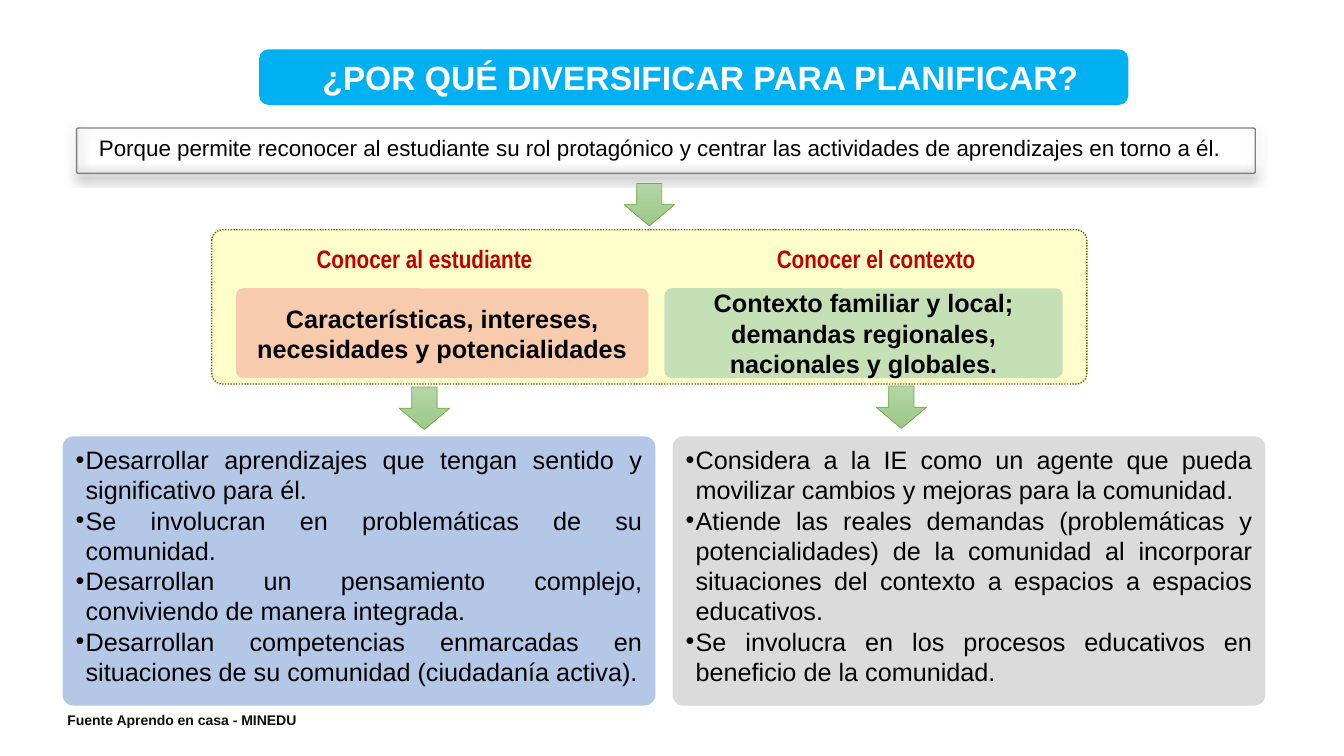
from dataclasses import dataclass
from lxml import etree
from pptx import Presentation
from pptx import util as u
from pptx.dml.color import RGBColor
from pptx.enum import dml, shapes, text
from pptx.oxml import ns

PX = 9144
SHAPE = shapes.MSO_SHAPE
ALIGN = text.PP_ALIGN
ANCHOR = text.MSO_ANCHOR


@dataclass(frozen=True)
class Theme:
    font: str = "Arial"
    narrow: str = "Arial Narrow"
    title_size: int = 24
    reason_size: int = 16
    body_size: int = 18
    source_size: int = 10
    white: str = "FFFFFF"
    black: str = "000000"
    ink: str = "0D0D0D"
    heading: str = "C00000"
    title_fill: str = "00B0F0"
    reason_line: str = "808080"
    panel_fill: str = "FFFFCC"
    panel_line: str = "806000"
    student: str = "F8CBAD"
    context: str = "C5E0B4"
    student_goals: str = "B4C7E7"
    context_goals: str = "DBDBDB"
    arrow_top: str = "B5D5A7"
    arrow_bottom: str = "9CC987"
    arrow_line: str = "70AD47"


THEME = Theme()


def emu(box):
    return [value * PX for value in box]


def add_box(slide, box, fill=None, line=None, width=1, radius=None, kind=SHAPE.ROUNDED_RECTANGLE):
    shape = slide.shapes.add_shape(kind, *emu(box))
    shape.shadow.inherit = False
    if radius is not None:
        shape.adjustments[0] = radius
    if fill:
        shape.fill.solid()
        shape.fill.fore_color.rgb = RGBColor.from_string(fill)
    else:
        shape.fill.background()
    if line:
        shape.line.color.rgb = RGBColor.from_string(line)
        shape.line.width = u.Pt(width)
    else:
        shape.line.fill.background()
    return shape


def write(shape, lines, size, color=THEME.black, bold=False, font=THEME.font,
          align=ALIGN.CENTER, anchor=ANCHOR.TOP):
    frame = shape.text_frame
    frame.word_wrap = True
    frame.vertical_anchor = anchor
    frame.text = "\n".join(lines)
    for paragraph in frame.paragraphs:
        paragraph.alignment = align
        for run in paragraph.runs:
            run.font.name = font
            run.font.size = u.Pt(size)
            run.font.bold = bold
            run.font.color.rgb = RGBColor.from_string(color)


def add_label(slide, box, label, size, **style):
    write(slide.shapes.add_textbox(*emu(box)), [label], size, **style)


def add_bullets(shape, indent):
    for paragraph in shape.text_frame.paragraphs:
        properties = paragraph._p.get_or_add_pPr()
        properties.set("marL", str(indent * PX))
        properties.set("indent", str(-indent * PX))
        etree.SubElement(properties, ns.qn("a:buFont"), typeface=THEME.font)
        etree.SubElement(properties, ns.qn("a:buChar"), char="•")


def add_soft_shadow(shape):
    effects = shape._element.spPr.find(ns.qn("a:effectLst"))
    shadow = etree.SubElement(effects, ns.qn("a:outerShdw"), blurRad=str(u.Pt(8.5)),
                              dist=str(u.Pt(1)), dir="5400000", rotWithShape="0")
    etree.SubElement(shadow, ns.qn("a:srgbClr"), val=THEME.black)


def add_title(slide, box):
    shape = add_box(slide, box, THEME.title_fill)
    write(shape, ["¿POR QUÉ DIVERSIFICAR PARA PLANIFICAR?"], THEME.title_size,
          THEME.white, bold=True, align=ALIGN.LEFT)
    shape.text_frame.margin_left = 60 * PX


def add_reason(slide, box):
    left, top, width, height = box
    add_soft_shadow(add_box(slide, box, line=THEME.reason_line, radius=0.04))
    add_label(slide, (left, top + 1, width - 12, height - 1),
              "Porque permite reconocer al estudiante su rol protagónico y centrar "
              "las actividades de aprendizajes en torno a él.", THEME.reason_size)


def add_knowledge_panel(slide, box):
    left, top, width, height = box
    panel = add_box(slide, box, THEME.panel_fill, THEME.panel_line, radius=0.07)
    panel.line.dash_style = dml.MSO_LINE.ROUND_DOT
    topics = [
        (24, 409, 67, THEME.student, "Conocer al estudiante",
         "Características, intereses, necesidades y potencialidades"),
        (449, 395, 515, THEME.context, "Conocer el contexto",
         "Contexto familiar y local; demandas regionales, nacionales y globales."),
    ]
    for offset, card_width, heading_offset, fill, heading, detail in topics:
        add_label(slide, (left + heading_offset, top + 8, 288, 28), heading, THEME.body_size,
                  color=THEME.heading, bold=True, font=THEME.narrow)
        card = add_box(slide, (left + offset, top + 58, card_width, 89), fill, radius=0.08)
        write(card, [detail], THEME.body_size, bold=True, anchor=ANCHOR.MIDDLE)


def add_goals(slide, box, fill, goals):
    shape = add_box(slide, box, fill, radius=0.04)
    write(shape, goals, THEME.body_size, align=ALIGN.JUSTIFY)
    add_bullets(shape, 10)


def add_arrow(slide, box):
    arrow = add_box(slide, box, THEME.arrow_top, THEME.arrow_line, 0.5, kind=SHAPE.DOWN_ARROW)
    arrow.fill.gradient()
    arrow.fill.gradient_angle = 270
    for stop, color in zip(arrow.fill.gradient_stops, (THEME.arrow_top, THEME.arrow_bottom)):
        stop.color.rgb = RGBColor.from_string(color)


def add_source(slide, box):
    add_label(slide, box, "Fuente Aprendo en casa - MINEDU", THEME.source_size,
              color=THEME.ink, bold=True, align=ALIGN.LEFT)


def main():
    presentation = Presentation()
    presentation.slide_width = 1333 * PX
    presentation.slide_height = 750 * PX
    slide = presentation.slides.add_slide(presentation.slide_layouts[6])

    add_title(slide, (257, 49, 862, 55))
    add_reason(slide, (76, 127, 1169, 45))
    add_knowledge_panel(slide, (210, 228, 868, 153))
    add_goals(slide, (62, 433, 588, 267), THEME.student_goals, [
        "Desarrollar aprendizajes que tengan sentido y significativo para él.",
        "Se involucran en problemáticas de su comunidad.",
        "Desarrollan un pensamiento complejo, conviviendo de manera integrada.",
        "Desarrollan competencias enmarcadas en situaciones de su comunidad (ciudadanía activa).",
    ])
    add_goals(slide, (667, 433, 588, 267), THEME.context_goals, [
        "Considera a la IE como un agente que pueda movilizar cambios y mejoras para la comunidad.",
        "Atiende las reales demandas (problemáticas y potencialidades) de la comunidad "
        "al incorporar situaciones del contexto a espacios a espacios educativos.",
        "Se involucra en los procesos educativos en beneficio de la comunidad.",
    ])
    for left, top in ((619, 182), (396, 384), (869, 383)):
        add_arrow(slide, (left, top, 50, 42))
    add_source(slide, (57, 701, 269, 27))

    presentation.save("out.pptx")


if __name__ == "__main__":
    main()
